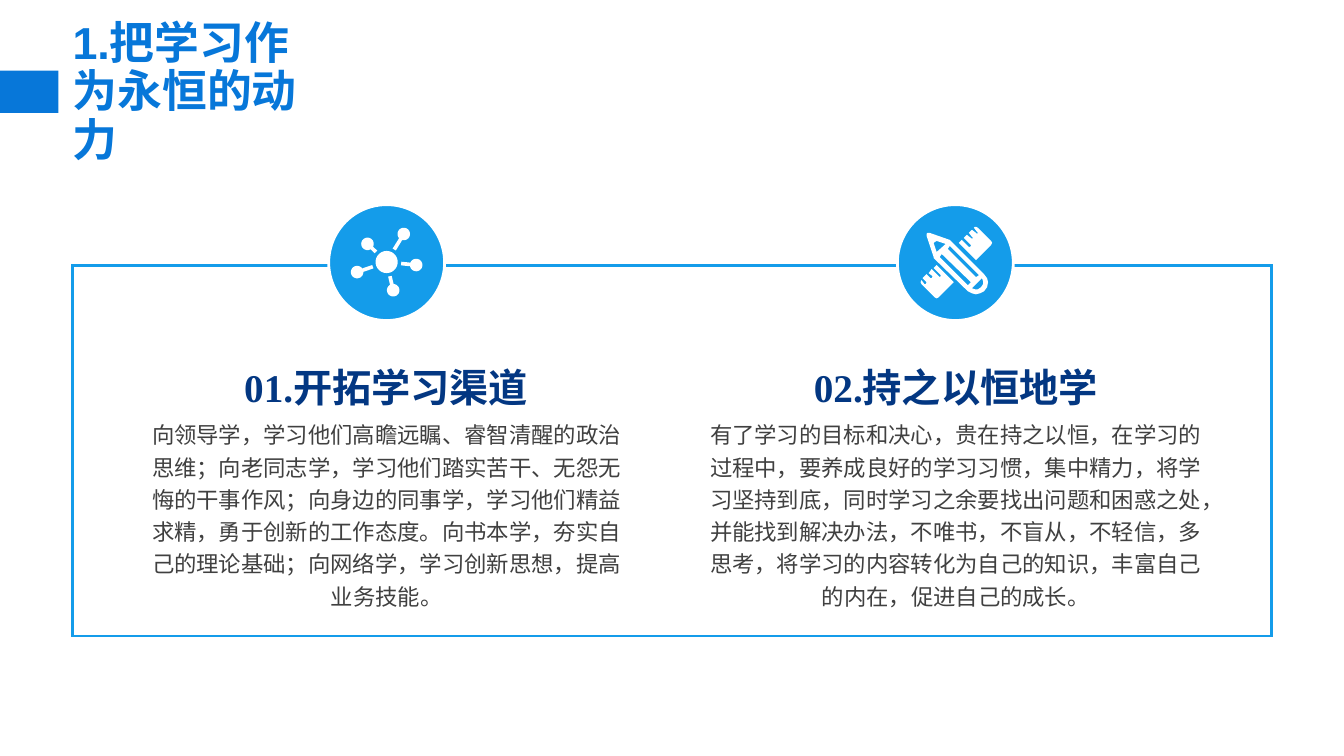
import math
from lxml import etree
from pptx import Presentation
from pptx.dml.color import RGBColor
from pptx.enum.shapes import MSO_SHAPE
from pptx.enum.text import MSO_ANCHOR, PP_ALIGN
from pptx.oxml.ns import qn
from pptx.util import Inches, Pt

RECT, OVAL = MSO_SHAPE.RECTANGLE, MSO_SHAPE.OVAL
LEFT, CENTER, MIDDLE = PP_ALIGN.LEFT, PP_ALIGN.CENTER, MSO_ANCHOR.MIDDLE
COLORS = {"title": "0777D9", "accent": "149CEA", "heading": "033782",
          "body": "404040", "white": "FFFFFF"}
RGB = {name: RGBColor.from_string(value) for name, value in COLORS.items()}
CJK = "Noto Sans CJK SC"

prs = Presentation()
prs.slide_width, prs.slide_height = Inches(13.33), Inches(7.5)
s = prs.slides.add_slide(prs.slide_layouts[6])


def add_block(kind, x, y, w, h, fill=None, line=None):
    sp = s.shapes.add_shape(kind, Inches(x), Inches(y), Inches(w), Inches(h))
    sp.shadow.inherit = False
    if fill:
        sp.fill.solid()
        sp.fill.fore_color.rgb = RGB[fill]
    else:
        sp.fill.background()
    if line:
        sp.line.color.rgb = RGB[line]
        sp.line.width = Pt(2)
        etree.SubElement(sp._element.spPr.find(qn("a:ln")), qn("a:miter"), lim="800000")
    else:
        sp.line.fill.background()


def add_text(x, y, w, h, runs, size, color, bold=False, spacing=1.2):
    """Add a wrapped one-paragraph box; runs are (text, Latin font) pairs."""
    tf = s.shapes.add_textbox(Inches(x), Inches(y), Inches(w), Inches(h)).text_frame
    tf.word_wrap = True
    tf.margin_left = tf.margin_right = 0
    p = tf.paragraphs[0]
    p.alignment = CENTER
    p.line_spacing = spacing
    for text, font in runs:
        r = p.add_run()
        r.text = text
        r.font.name, r.font.size, r.font.bold = font, Pt(size), bold
        r.font.color.rgb = RGB[color]
        etree.SubElement(r.font._element, qn("a:ea"), typeface=CJK)
    return tf


# Title and frame
add_block(RECT, 0, 0.7, 0.58, 0.42, fill="title")
tf = add_text(0.72, 0.71, 2.43, 0.43, [("1.把学习作为永恒的动力", "Arial")],
              32, "title", True, 0.9)
tf.margin_right = Inches(0.1)
tf.vertical_anchor = MIDDLE
tf.paragraphs[0].alignment = LEFT
tf.paragraphs[0].space_before = Pt(10)
add_block(RECT, 0.72, 2.63, 11.89, 3.68, line="accent")

# Two columns: badge x, heading (x, width), body (x, width), texts
columns = [
    (3.26, (1.08, 5.5), (1.49, 4.69), "01.", "开拓学习渠道",
     "向领导学，学习他们高瞻远瞩、睿智清醒的政治思维；向老同志学，学习他们踏实苦干、"
     "无怨无悔的干事作风；向身边的同事学，学习他们精益求精，勇于创新的工作态度。"
     "向书本学，夯实自己的理论基础；向网络学，学习创新思想，提高业务技能。"),
    (8.9, (6.55, 5.86), (6.99, 4.98), "02.", "持之以恒地学",
     "有了学习的目标和决心，贵在持之以恒，在学习的过程中，要养成良好的学习习惯，"
     "集中精力，将学习坚持到底，同时学习之余要找出问题和困惑之处，并能找到解决办法，"
     "不唯书，不盲从，不轻信，多思考，将学习的内容转化为自己的知识，丰富自己的内在，"
     "促进自己的成长。"),
]
for badge_x, (head_x, head_w), (body_x, body_w), number, heading, body in columns:
    add_block(OVAL, badge_x, 2.03, 1.15, 1.15, fill="accent", line="white")
    add_text(body_x, 4.08, body_w, 2.04, [(body, CJK)], 16, "body")
    add_text(head_x, 3.46, head_w, 0.62,
             [(number, "Times New Roman"), (heading, CJK)], 28, "heading", True)

# Network icon, in thousandths of an inch: hub, nodes, and spokes that clear the hub
hub_x, hub_y, hub_r = 355, 340, 110
node_r, spoke_start, spoke_half = 62, 145, 18
nodes = [(420, 620), (62, 440), (648, 370), (165, 160), (525, 62)]
network = []
for x, y, radius in [(hub_x, hub_y, hub_r)] + [(x, y, node_r) for x, y in nodes]:
    angles = [math.radians(10 * step) for step in range(36)]
    network.append([(round(x + radius * math.cos(a)), round(y + radius * math.sin(a)))
                    for a in angles])
for x, y in nodes:
    length = math.hypot(x - hub_x, y - hub_y)
    ux, uy = (x - hub_x) / length, (y - hub_y) / length
    ends = [(spoke_start, -spoke_half), (length - node_r, -spoke_half),
            (length - node_r, spoke_half), (spoke_start, spoke_half)]
    network.append([(round(hub_x + along * ux - side * uy),
                     round(hub_y + along * uy + side * ux)) for along, side in ends])

# Pencil and ruler icon, in hundredths of an inch
pencil_and_ruler = [
    # pencil outline, then the openings inside it
    [(9, 6), (29, 13), (30, 14), (63, 47), (66, 51), (67, 55), (66, 60), (63, 64),
     (59, 66), (55, 67), (51, 66), (47, 64), (13, 31), (13, 30), (6, 9), (6, 7), (7, 6)],
    [(61, 51), (51, 61), (54, 62), (57, 62), (60, 60), (62, 57), (62, 54)],
    [(21, 27), (19, 30), (47, 58), (50, 55)],
    [(29, 19), (27, 22), (55, 50), (58, 48)],
    [(16, 14), (13, 16), (16, 25), (25, 17)],
    # lower and upper ruler halves
    [(16, 38), (33, 55), (18, 70), (16, 71), (14, 70), (1, 57), (0, 55), (1, 53),
     (4, 57), (5, 57), (6, 55), (2, 51), (6, 47), (10, 51), (11, 51), (12, 49),
     (8, 46), (11, 42), (18, 49), (19, 50), (20, 49), (20, 48), (13, 41)],
    [(55, 0), (57, 1), (70, 14), (71, 16), (70, 18), (55, 33), (38, 16), (41, 13),
     (48, 20), (49, 20), (50, 19), (50, 18), (43, 11), (46, 8), (50, 11), (51, 12),
     (52, 11), (51, 10), (48, 6), (51, 3), (55, 6), (56, 7), (57, 6), (56, 5),
     (53, 1), (54, 0)],
]

for outlines, x, y, units_per_inch in [(network, 3.48, 2.26, 1000),
                                       (pencil_and_ruler, 9.13, 2.25, 100)]:
    builder = s.shapes.build_freeform(*outlines[0][0], scale=Inches(1) / units_per_inch)
    for i, outline in enumerate(outlines):
        if i:
            builder.move_to(*outline[0])
        builder.add_line_segments(outline[1:], close=True)
    icon = builder.convert_to_shape(Inches(x), Inches(y))
    icon.shadow.inherit = False
    icon.fill.solid()
    icon.fill.fore_color.rgb = RGB["white"]
    icon.line.fill.background()

prs.save("out.pptx")
